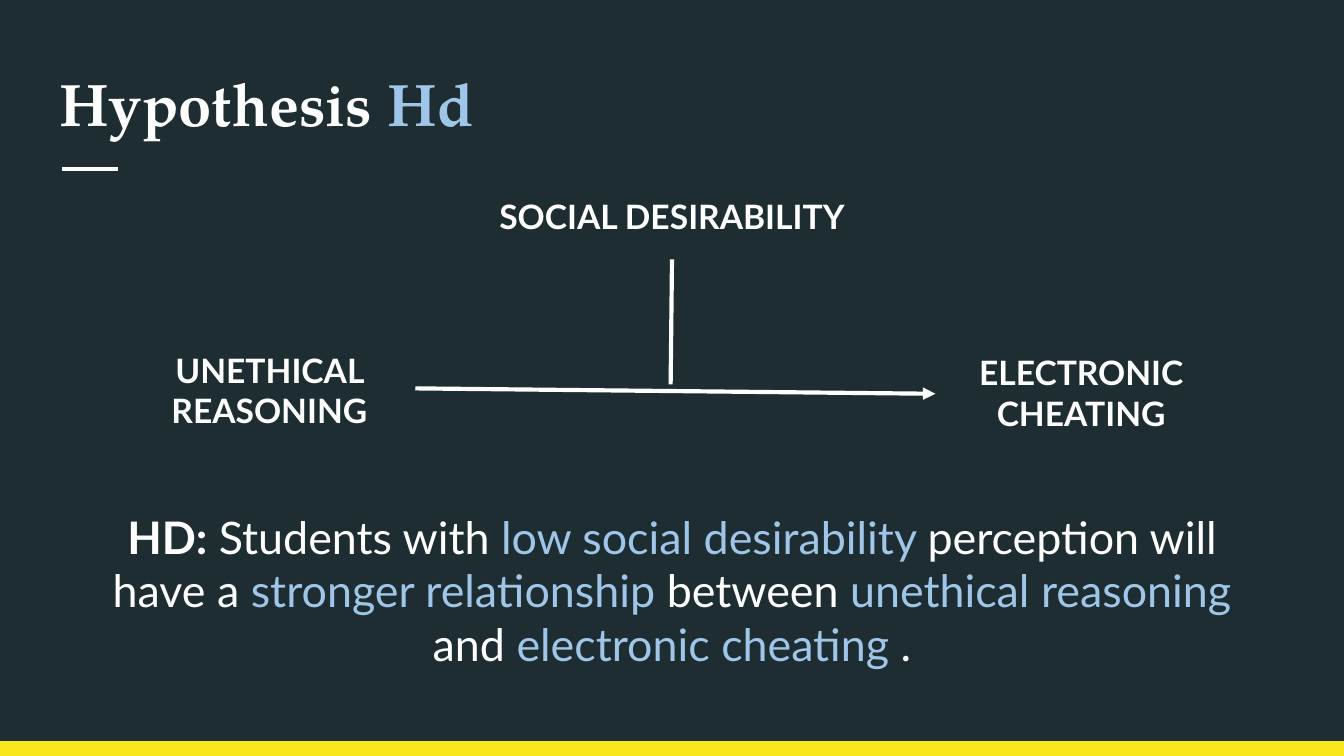
import dataclasses

import lxml.etree
import pptx
import pptx.dml.color
import pptx.enum.shapes
import pptx.enum.text
import pptx.oxml.ns
import pptx.util

ALIGN = pptx.enum.text.PP_ALIGN
ANCHOR = pptx.enum.text.MSO_ANCHOR
COLS, ROWS = 100, 56.25


@dataclasses.dataclass(frozen=True)
class Theme:
    """Colours, fonts and sizes of the slide."""
    back: str = "1E2D31"
    text: str = "FFFFFF"
    accent: str = "9FC5E8"
    band: str = "F8E71C"
    serif: str = "TeX Gyre Pagella"
    sans: str = "Lato"
    title: int = 32
    claim: int = 24
    label: int = 18
    line: float = 2.25


THEME = Theme()


def unit(count):
    """Turn a count of grid cells into a length."""
    return pptx.util.Inches(round(count * 10 / COLS, 3))


def color(code):
    """Turn a hex code into a colour."""
    return pptx.dml.color.RGBColor.from_string(code)


def place(shape, box):
    """Set a shape's left, top, width and height in grid cells."""
    shape.left, shape.top, shape.width, shape.height = map(unit, box)


def paint(shape, code):
    """Fill a shape with one colour."""
    shape.fill.solid()
    shape.fill.fore_color.rgb = color(code)


def write(shape, runs, size, face=THEME.sans, bold=True, align=ALIGN.CENTER, anchor=ANCHOR.TOP):
    """Write one paragraph of (text, colour) runs."""
    frame = shape.text_frame
    frame.word_wrap = True
    frame.auto_size = pptx.enum.text.MSO_AUTO_SIZE.NONE
    frame.vertical_anchor = anchor
    frame.margin_left = frame.margin_right = unit(1)
    frame.margin_top = frame.margin_bottom = unit(1)
    para = frame.paragraphs[0]
    para.alignment = align
    para.space_before = pptx.util.Pt(0)
    para.font.name, para.font.size, para.font.bold = face, pptx.util.Pt(size), bold
    for text, code in runs:
        run = para.add_run()
        run.text = text
        run.font.color.rgb = color(code)
    return para


def add_text(slide, box, runs, size, bold=True):
    """Add a centred text box."""
    shape = slide.shapes.add_textbox(*map(unit, box))
    write(shape, runs, size, bold=bold)
    return shape


def add_line(slide, start, end, head=False):
    """Add a straight line, with an arrowhead if asked."""
    line = slide.shapes.add_connector(
        pptx.enum.shapes.MSO_CONNECTOR.STRAIGHT, *map(unit, start + end))
    line.line.color.rgb = color(THEME.text)
    line.line.width = pptx.util.Pt(THEME.line)
    qn = pptx.oxml.ns.qn
    props = line._element.spPr
    if head:
        lxml.etree.SubElement(props.find(qn("a:ln")), qn("a:tailEnd"), type="triangle")
    lxml.etree.SubElement(props, qn("a:effectLst"))
    return line


def add_frame(slide):
    """Add the background, the bottom band and the title rule."""
    paint(slide.background, THEME.back)
    band = slide.shapes.add_shape(
        pptx.enum.shapes.MSO_SHAPE.RECTANGLE, *map(unit, (0, ROWS - 1.1, COLS, 1.1)))
    band.shadow.inherit = False
    paint(band, THEME.band)
    band.line.fill.background()
    add_line(slide, (4.6, 12.6), (8.8, 12.6))


def set_title(slide):
    """Fill the title placeholder."""
    title = slide.shapes.title
    place(title, (3.4, 4.1, 93.2, 7.1))
    paint(title, THEME.back)
    write(title, [("Hypothesis ", THEME.text), ("Hd", THEME.accent)], THEME.title,
          THEME.serif, align=ALIGN.LEFT, anchor=ANCHOR.MIDDLE)


def set_body(slide):
    """Fill the body placeholder with the moderator's label."""
    body = slide.placeholders[1]
    place(body, (29.2, 13.1, 41.6, 6.2))
    para = write(body, [("SOCIAL DESIRABILITY", THEME.text)], THEME.label)
    para.line_spacing = 1.15
    para.space_after = pptx.util.Pt(16)
    props = para._p.get_or_add_pPr()
    props.set("marL", "0")
    props.set("indent", "0")
    mark = lxml.etree.Element(pptx.oxml.ns.qn("a:buNone"))
    props.find(pptx.oxml.ns.qn("a:defRPr")).addprevious(mark)
    return body


def add_model(slide):
    """Add the labels and lines of the moderation model."""
    social = set_body(slide)
    cause, _ = (
        add_text(slide, (left, top, 21.7, 7.8), [(text, THEME.text)], THEME.label)
        for left, top, text in ((9.2, 25, "UNETHICAL REASONING"),
                                (69.6, 25.2, "ELECTRONIC CHEATING")))
    arrow = add_line(slide, (30.9, 28.9), (69.6, 29.3), head=True)
    arrow.begin_connect(cause, 3)
    stem = add_line(slide, (50, 19.3), (49.9, 28.6))
    stem.begin_connect(social, 2)


def add_claim(slide):
    """Add the hypothesis sentence, with its key terms in the accent colour."""
    parts = ("HD:", " Students with ", "low social desirability ",
             "perception will have a ", "stronger relationship", " between ",
             "unethical reasoning ", "and ", "electronic cheating ", ".")
    keys = {2, 4, 6, 8}
    runs = [(part, THEME.accent if spot in keys else THEME.text)
            for spot, part in enumerate(parts)]
    claim = add_text(slide, (6.6, 36.9, 86.8, 8.6), runs, THEME.claim, bold=False)
    claim.text_frame.paragraphs[0].runs[0].font.bold = True


def main():
    """Build the slide and save it."""
    deck = pptx.Presentation()
    deck.slide_width, deck.slide_height = unit(COLS), unit(ROWS)
    slide = deck.slides.add_slide(deck.slide_layouts[1])
    add_frame(slide)
    set_title(slide)
    add_model(slide)
    add_claim(slide)
    deck.save("out.pptx")


if __name__ == "__main__":
    main()
